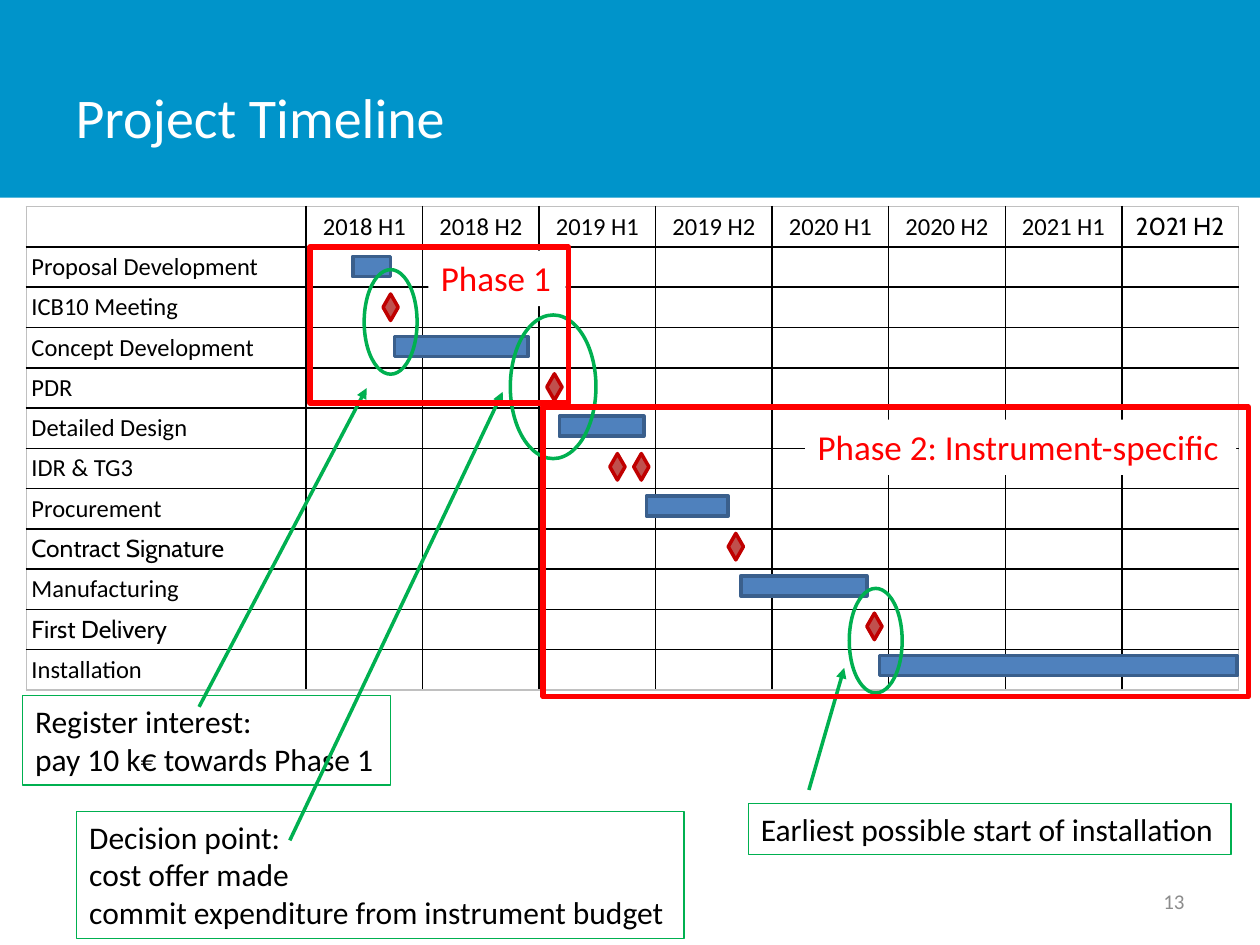
from collections import namedtuple

from lxml import etree
from pptx import Presentation
from pptx.dml.color import RGBColor
from pptx.enum import shapes, text
from pptx.oxml import ns
from pptx.util import Inches, Pt

BLUE_BAND = RGBColor(0x00, 0x94, 0xCA)
BAR_FILL = RGBColor(0x4F, 0x81, 0xBD)
BAR_LINE = RGBColor(0x3A, 0x5F, 0x8C)
MARK_FILL = RGBColor(0xC0, 0x50, 0x4D)
MARK_LINE = RGBColor(0xC0, 0x00, 0x00)
GREEN = RGBColor(0x00, 0xB0, 0x50)
RED = RGBColor(0xFF, 0x00, 0x00)
BLACK = RGBColor(0x00, 0x00, 0x00)
WHITE = RGBColor(0xFF, 0xFF, 0xFF)
GREY = RGBColor(0x8C, 0x8C, 0x8C)
EDGE_GREY = RGBColor(0xC0, 0xC0, 0xC0)

Box = namedtuple("Box", "left top width height")

PERIODS = [f"{year} H{half}" for year in range(2018, 2022) for half in (1, 2)]
# Task name, bars as (offset, length), milestone offsets; inches from the table's left
TASKS = [
    ("Proposal Development", [(2.59, 0.3)], []),
    ("ICB10 Meeting", [], [2.83]),
    ("Concept Development", [(2.92, 1.06)], []),
    ("PDR", [], [4.13]),
    ("Detailed Design", [(4.23, 0.67)], []),
    ("IDR & TG3", [], [4.63, 4.82]),
    ("Procurement", [(4.92, 0.65)], []),
    ("Contract Signature", [], [5.57]),
    ("Manufacturing", [(5.67, 1)], []),
    ("First Delivery", [], [6.67]),
    ("Installation", [(6.77, 2.84)], []),
]
CABIN_LABELS = {"2021 H2", "Contract Signature", "First Delivery"}


def inches(box):
    return [Inches(length) for length in box]


def add_run(paragraph, words, size, color, font="Calibri"):
    run = paragraph.add_run()
    run.text = words
    run.font.size, run.font.name = Pt(size), font
    run.font.color.rgb = color


def add_figure(slide, kind, box, fill=None, line=None, width=2):
    shape = slide.shapes.add_shape(kind, *inches(box))
    shape.shadow.inherit = False
    if fill is None:
        shape.fill.background()
    else:
        shape.fill.solid()
        shape.fill.fore_color.rgb = fill
    if line is None:
        shape.line.fill.background()
    else:
        shape.line.color.rgb = line
        shape.line.width = Pt(width)
    return shape


def add_label(slide, box, lines, size, color, fill=None, line=None):
    label = slide.shapes.add_textbox(*inches(box))
    if fill is not None:
        label.fill.solid()
        label.fill.fore_color.rgb = fill
    if line is not None:
        label.line.color.rgb = line
        label.line.width = Pt(0.75)
    frame = label.text_frame
    frame.word_wrap = False
    frame.auto_size = text.MSO_AUTO_SIZE.SHAPE_TO_FIT_TEXT
    for index, words in enumerate(lines):
        paragraph = frame.add_paragraph() if index else frame.paragraphs[0]
        add_run(paragraph, words, size, color)


def add_arrow(slide, start, end):
    arrow = slide.shapes.add_connector(
        shapes.MSO_CONNECTOR.STRAIGHT, *inches(start + end))
    arrow.line.color.rgb = GREEN
    arrow.line.width = Pt(2)
    line = arrow.line._get_or_add_ln()
    etree.SubElement(line, ns.qn("a:tailEnd"), type="triangle")
    etree.SubElement(arrow._element.spPr, ns.qn("a:effectLst"))


def add_header(slide, box):
    band = add_figure(slide, shapes.MSO_SHAPE.RECTANGLE, box, BLUE_BAND)
    slide.shapes._spTree.insert(2, band._element)  # behind the title
    title = slide.shapes.title
    title.left, title.top, title.width, title.height = inches(
        Box(box.left + 0.5, box.top + 0.3, 7.81, 1.25))
    title.text_frame.vertical_anchor = text.MSO_ANCHOR.MIDDLE
    paragraph = title.text_frame.paragraphs[0]
    paragraph.alignment = text.PP_ALIGN.LEFT
    add_run(paragraph, "Project Timeline", 32, WHITE)


def set_borders(cell, colors):
    """Draw the left, right, top and bottom borders in the given colours."""
    properties = cell._tc.get_or_add_tcPr()
    for index, (side, color) in enumerate(zip("LRTB", colors)):
        line = etree.Element(ns.qn(f"a:ln{side}"), w=str(Pt(1)))
        fill = etree.SubElement(line, ns.qn("a:solidFill"))
        etree.SubElement(fill, ns.qn("a:srgbClr"), val=str(color))
        properties.insert(index, line)


def add_grid(slide, box):
    labels = [["", *PERIODS]]
    labels += [[name] + [""] * len(PERIODS) for name, _, _ in TASKS]
    last_row, last_column = len(TASKS), len(PERIODS)
    table = slide.shapes.add_table(
        last_row + 1, last_column + 1, *inches(box)).table
    table.first_row = table.horz_banding = False
    name_width = 2.22
    for index, column in enumerate(table.columns):
        column.width = Inches(
            (box.width - name_width) / last_column if index else name_width)
    for r, row in enumerate(table.rows):
        row.height = Inches(0.32)
        for c, cell in enumerate(row.cells):
            cell.fill.background()
            cell.margin_left = cell.margin_right = Inches(0.04)
            cell.margin_top = cell.margin_bottom = Inches(0.04)
            cell.vertical_anchor = text.MSO_ANCHOR.MIDDLE
            edges = (c == 0, c == last_column, r == 0, r == last_row)
            set_borders(cell, [EDGE_GREY if edge else BLACK for edge in edges])
            paragraph = cell.text_frame.paragraphs[0]
            words = labels[r][c]
            if words:
                paragraph.alignment = (
                    text.PP_ALIGN.LEFT if r else text.PP_ALIGN.CENTER)
                font = "Cabin" if words in CABIN_LABELS else "Calibri"
                add_run(paragraph, words, 14, BLACK, font)
            else:
                # An empty cell takes its height from the paragraph's end mark
                etree.SubElement(paragraph._p, ns.qn("a:endParaRPr"), sz="1400")


def add_schedule(slide, box):
    """Place the bars and milestones of all tasks over the grid."""
    step = box.height / (len(TASKS) + 1)
    for row, (_, bars, milestones) in enumerate(TASKS, start=1):
        top = box.top + row * step
        for offset, length in bars:
            add_figure(slide, shapes.MSO_SHAPE.RECTANGLE,
                       Box(box.left + offset, top + 0.08, length, 0.16),
                       BAR_FILL, BAR_LINE)
        for offset in milestones:
            add_figure(slide, shapes.MSO_SHAPE.DIAMOND,
                       Box(box.left + offset, top + 0.06, 0.12, 0.21),
                       MARK_FILL, MARK_LINE)


def add_callout(slide, box, lines, ring, start, end):
    """Ring a decision, describe it in a box and join both by an arrow."""
    add_figure(slide, shapes.MSO_SHAPE.OVAL, ring, line=GREEN)
    add_label(slide, box, lines, 18, BLACK, line=GREEN)
    add_arrow(slide, start, end)


def add_phase(slide, box, name, label):
    """Frame a phase; the label box is relative to the frame."""
    add_figure(slide, shapes.MSO_SHAPE.RECTANGLE, box, line=RED, width=3)
    label_box = label._replace(left=box.left + label.left, top=box.top + label.top)
    add_label(slide, label_box, [name], 20, RED, fill=WHITE)


def add_slide_number(slide, box, number):
    frame = slide.shapes.add_textbox(*inches(box)).text_frame
    frame.word_wrap = True
    frame.vertical_anchor = text.MSO_ANCHOR.MIDDLE
    frame.paragraphs[0].alignment = text.PP_ALIGN.RIGHT
    add_run(frame.paragraphs[0], number, 12, GREY)


def main():
    presentation = Presentation()
    presentation.slide_width, presentation.slide_height = Inches(10), Inches(7.5)
    slide = presentation.slides.add_slide(presentation.slide_layouts[5])
    add_header(slide, Box(0, 0, 10, 1.57))
    add_slide_number(slide, Box(7.17, 6.95, 2.33, 0.4), "13")
    timeline = Box(0.21, 1.64, 9.62, 3.8)
    add_grid(slide, timeline)
    add_schedule(slide, timeline)
    add_callout(slide, Box(0.18, 5.52, 2.92, 0.71),
                ["Register interest:", "pay 10 k€ towards Phase 1"],
                Box(2.89, 2.14, 0.42, 0.83), (1.58, 5.61), (2.91, 3.08))
    add_callout(slide, Box(0.61, 6.44, 4.82, 1.01),
                ["Decision point:", "cost offer made",
                 "commit expenditure from instrument budget"],
                Box(4.05, 2.5, 0.68, 1.14), (2.3, 6.67), (3.99, 3.11))
    add_callout(slide, Box(5.94, 6.38, 3.83, 0.4),
                ["Earliest possible start of installation"],
                Box(6.74, 4.67, 0.42, 0.83), (6.42, 6.27), (6.7, 5.3))
    add_phase(slide, Box(4.31, 3.23, 5.6, 2.3),
              "Phase 2: Instrument-specific", Box(2.08, 0.1, 3.42, 0.44))
    add_phase(slide, Box(2.46, 1.96, 2.05, 1.24),
              "Phase 1", Box(0.94, 0.03, 1.09, 0.44))
    presentation.save("out.pptx")


if __name__ == "__main__":
    main()
